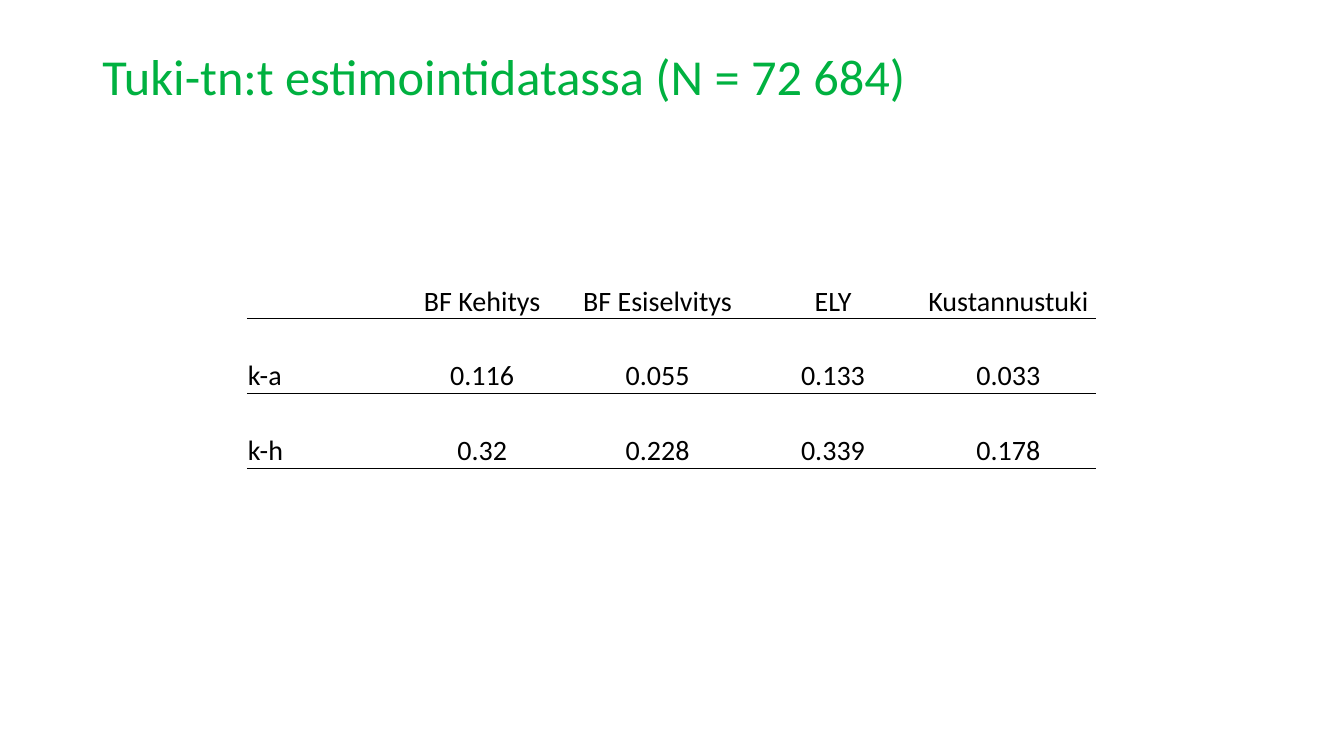
from dataclasses import dataclass

from lxml import etree
from pptx import Presentation
from pptx.dml.color import RGBColor
from pptx.enum.text import MSO_ANCHOR, PP_ALIGN
from pptx.oxml.ns import qn
from pptx.util import Pt

LEFT, CENTER = PP_ALIGN.LEFT, PP_ALIGN.CENTER
TOP, BOTTOM = MSO_ANCHOR.TOP, MSO_ANCHOR.BOTTOM


@dataclass(frozen=True)
class Theme:
    font: str = "Calibri"
    title_size: Pt = Pt(36)
    table_size: Pt = Pt(20)
    title_color: RGBColor = RGBColor(0x00, 0xB1, 0x40)
    text_color: RGBColor = RGBColor(0x00, 0x00, 0x00)
    rule_width: Pt = Pt(0.5)


@dataclass(frozen=True)
class TableRow:
    label: str
    values: tuple[str, ...]
    height: Pt
    rules: tuple[str, ...] = ()


THEME = Theme()
NO_STYLE = "{2D5ABB26-0587-4C30-8999-92F81FD0307C}"
LABEL_WIDTH, VALUE_WIDTH = Pt(105.4), Pt(125.3)
ROWS = (
    TableRow("", ("BF Kehitys", "BF Esiselvitys", "ELY", "Kustannustuki"),
             Pt(99.4), ("a:lnB",)),
    TableRow("k-a", ("0.116", "0.055", "0.133", "0.033"), Pt(53.3), ("a:lnT",)),
    TableRow("k-h", ("0.32", "0.228", "0.339", "0.178"), Pt(53.3), ("a:lnB",)),
)
TITLE_BOX = {"left": Pt(66), "top": Pt(33.8), "width": Pt(828), "height": Pt(84.2)}
CELL_FORMAT = {
    "margin_left": Pt(0.75), "margin_right": Pt(0.75),
    "margin_top": Pt(0.75), "margin_bottom": Pt(0),
    "vertical_anchor": BOTTOM,
}


def set_attrs(obj: object, values: dict) -> None:
    for name, value in values.items():
        setattr(obj, name, value)


def write_text(p, text: str, size: Pt, color: RGBColor, align: PP_ALIGN) -> None:
    p.alignment = align
    r = p.add_run()
    r.text = text
    set_attrs(r.font, {"name": THEME.font, "size": size, "bold": False})
    r.font.color.rgb = color


def add_rule(cell, edge: str) -> None:
    ln = etree.Element(qn(edge), w=str(int(THEME.rule_width)))
    fill = etree.SubElement(ln, qn("a:solidFill"))
    etree.SubElement(fill, qn("a:srgbClr"), val=str(THEME.text_color))
    cell._tc.get_or_add_tcPr().insert(0, ln)


def add_title(s, text: str) -> None:
    sp = s.shapes.title
    set_attrs(sp, TITLE_BOX)
    tf = sp.text_frame
    set_attrs(tf, {"word_wrap": True, "vertical_anchor": TOP})
    p = tf.paragraphs[0]
    p.line_spacing = 0.9
    write_text(p, text, THEME.title_size, THEME.title_color, LEFT)


def add_support_table(s, rows: tuple[TableRow, ...]) -> None:
    widths = [LABEL_WIDTH] + [VALUE_WIDTH] * len(rows[0].values)
    height = sum(row.height for row in rows)
    table = s.shapes.add_table(
        len(rows), len(widths), Pt(176.4), Pt(128.2), sum(widths), height).table
    set_attrs(table, {"first_row": False, "horz_banding": False})
    table._tbl.tblPr.find(qn("a:tableStyleId")).text = NO_STYLE
    for column, width in zip(table.columns, widths):
        column.width = width
    for i, row in enumerate(rows):
        table.rows[i].height = row.height
        for j, text in enumerate((row.label, *row.values)):
            cell = table.cell(i, j)
            set_attrs(cell, CELL_FORMAT)
            cell.fill.background()
            for edge in row.rules:
                add_rule(cell, edge)
            if text:
                write_text(cell.text_frame.paragraphs[0], text, THEME.table_size,
                           THEME.text_color, CENTER if j else LEFT)


def main() -> None:
    prs = Presentation()
    set_attrs(prs, {"slide_width": Pt(960), "slide_height": Pt(540)})
    s = prs.slides.add_slide(prs.slide_layouts[5])
    add_title(s, "Tuki-tn:t estimointidatassa (N = 72 684)")
    add_support_table(s, ROWS)
    prs.save("out.pptx")


if __name__ == "__main__":
    main()
